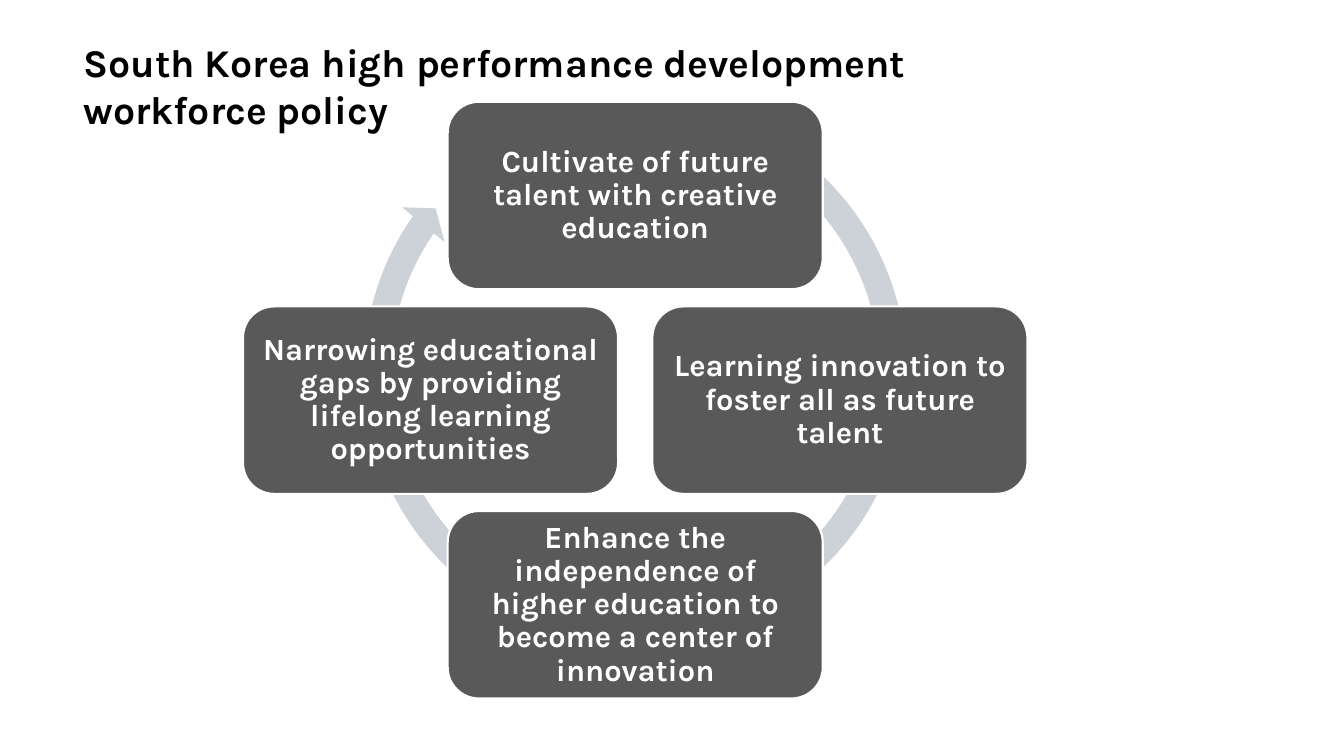
from pptx import Presentation
from pptx.dml.color import RGBColor
from pptx.enum.shapes import MSO_SHAPE as Shape
from pptx.enum.text import MSO_ANCHOR as Anchor, MSO_AUTO_SIZE as AutoSize, PP_ALIGN as Align
from pptx.util import Inches, Pt

BLACK = RGBColor(0x00, 0x00, 0x00)
WHITE = RGBColor(0xFF, 0xFF, 0xFF)
GRAY = RGBColor(0x59, 0x59, 0x59)
PALE = RGBColor(0xCC, 0xD2, 0xD8)


def add_bold_run(para, text, size, color):
    span = para.add_run()
    span.text = text
    span.font.name = "Karla"
    span.font.size = Pt(size)
    span.font.bold = True
    span.font.color.rgb = color


deck = Presentation()
deck.slide_width = Inches(13.33)
deck.slide_height = Inches(7.5)
page = deck.slides.add_slide(deck.slide_layouts[6])

title = page.shapes.add_textbox(Inches(0.73), Inches(0.33), Inches(10.23), Inches(0.57))
title.text_frame.word_wrap = True
title.text_frame.auto_size = AutoSize.SHAPE_TO_FIT_TEXT
add_bold_run(title.text_frame.paragraphs[0],
             "South Korea high performance development workforce policy", 28, BLACK)

cycle = page.shapes.add_shape(Shape.CIRCULAR_ARROW, Inches(3.47), Inches(0.86),
                              Inches(5.66), Inches(5.66))
for index, value in enumerate([0.047, 2.729, 128.887, 179.919, 0.048]):
    cycle.adjustments[index] = value
cycle.shadow.inherit = False
cycle.fill.solid()
cycle.fill.fore_color.rgb = PALE
cycle.line.fill.background()

CENTER_LEFT, CENTER_TOP, OFFSET = 4.44, 3.04, 2.03
policies = [
    (0, -1, "Cultivate of future talent with creative education"),
    (1, 0, "Learning innovation to foster all as future talent"),
    (0, 1, "Enhance the independence of higher education to become a center of innovation"),
    (-1, 0, "Narrowing educational gaps by providing lifelong learning opportunities"),
]
for column, row, text in policies:
    box = page.shapes.add_shape(Shape.ROUNDED_RECTANGLE,
                                Inches(CENTER_LEFT + column * OFFSET),
                                Inches(CENTER_TOP + row * OFFSET),
                                Inches(3.72), Inches(1.86))
    box.shadow.inherit = False
    box.fill.solid()
    box.fill.fore_color.rgb = GRAY
    box.line.color.rgb = WHITE
    box.line.width = Pt(1.5)
    frame = box.text_frame
    frame.word_wrap = True
    frame.vertical_anchor = Anchor.MIDDLE
    frame.margin_left = frame.margin_right = Inches(0.09)
    frame.margin_top = frame.margin_bottom = Inches(0.09)
    para = frame.paragraphs[0]
    para.alignment = Align.CENTER
    para.line_spacing = 0.9
    add_bold_run(para, text, 22, WHITE)

deck.save("out.pptx")
